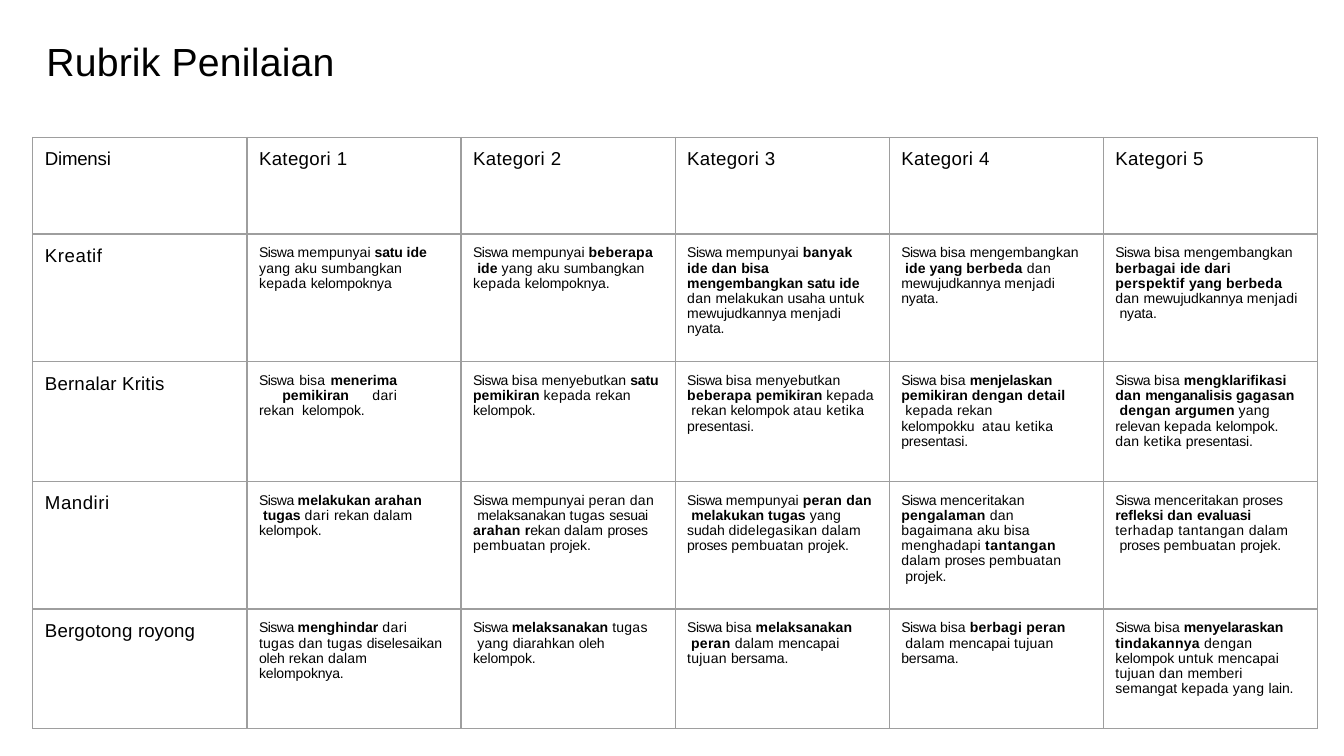
import dataclasses

import lxml.etree
import pptx
import pptx.dml.color
import pptx.enum.text
import pptx.oxml.ns
import pptx.util

Pt = pptx.util.Pt
ALIGN = pptx.enum.text.PP_ALIGN


@dataclasses.dataclass(frozen=True)
class Theme:
    font: str = "Arial"
    ink: str = "000000"
    rule: str = "9E9E9E"
    title: float = 21
    label: float = 10
    body: float = 7.5
    line: float = 0.75


@dataclasses.dataclass(frozen=True)
class Note:
    """Cell text; asterisks enclose bold words, right is the right margin."""
    text: str
    right: float = 0
    just: bool = False


THEME = Theme()

# Letter spacing by word, in points; words not listed have none
GROUPS = {
    0.3: "Kreatif Mandiri",
    0.2: "Kategori dari atau tantangan terhadap",
    0.1: "Rubrik Penilaian Bernalar Kritis Bergotong yang kepada beberapa "
         "banyak dan untuk menjadi berbeda berbagai perspektif dengan detail "
         "ketika gagasan peran tugas dalam pembuatan arahan didelegasikan "
         "pengalaman bagaimana menghadapi tindakannya tujuan berbagi",
    -0.1: "Dimensi 2 satu kelompoknya kelompok kelompokku usaha mewujudkannya "
          "nyata presentasi menjelaskan menganalisis relevan melaksanakan "
          "projek sudah reﬂeksi evaluasi diselesaikan oleh bersama "
          "menyelaraskan lain r ekan",
    -0.2: "4 proses sesuai",
    -0.3: "3 5 Siswa",
    -2.3: "1",
}
TRACK = {word: gap for gap, words in GROUPS.items() for word in words.split()}
BOLD_TRACK = TRACK | {"yang": 0, "tugas": 0, "melaksanakan": 0,
                      "dari": 0.1, "bisa": -0.1}

HEADS = ["Dimensi"] + [f"Kategori {n}" for n in range(1, 6)]
ROWS = {
    "Kreatif": [
        Note("Siswa mempunyai *satu ide  *yang aku sumbangkan  kepada kelompoknya", 16),
        Note("Siswa mempunyai *beberapa  ide *yang aku sumbangkan  kepada kelompoknya.", 10.2),
        Note("Siswa mempunyai *banyak  ide dan bisa  mengembangkan satu ide  *dan "
             "melakukan usaha untuk  mewujudkannya menjadi  nyata.", 10.3),
        Note("Siswa bisa mengembangkan  *ide yang berbeda *dan  mewujudkannya "
             "menjadi  nyata.", 11.5),
        Note("Siswa bisa mengembangkan  *berbagai ide dari  perspektif yang berbeda  *"
             "dan mewujudkannya menjadi  nyata.", 8.8),
    ],
    "Bernalar Kritis": [
        Note("Siswa bisa *menerima  pemikiran *dari rekan  kelompok.", 34.2, True),
        Note("Siswa bisa menyebutkan *satu  pemikiran *kepada rekan  kelompok.", 6.6),
        Note("Siswa bisa menyebutkan  *beberapa pemikiran *kepada  rekan kelompok "
             "atau ketika  presentasi.", 6.6),
        Note("Siswa bisa *menjelaskan  pemikiran dengan detail  *kepada rekan "
             "kelompokku  atau ketika presentasi.", 19),
        Note("Siswa bisa *mengklariﬁkasi  dan menganalisis gagasan  dengan argumen *"
             "yang  relevan kepada kelompok.  dan ketika presentasi.", 11),
    ],
    "Mandiri": [
        Note("Siswa *melakukan arahan  tugas *dari rekan dalam  kelompok.", 19.3),
        Note("Siswa mempunyai peran dan  melaksanakan tugas sesuai  *arahan r*ekan "
             "dalam proses  pembuatan projek.", 9.8),
        Note("Siswa mempunyai *peran dan  melakukan tugas *yang  sudah didelegasikan "
             "dalam  proses pembuatan projek.", 7.7),
        Note("Siswa menceritakan  *pengalaman *dan  bagaimana aku bisa  menghadapi "
             "*tantangan  *dalam proses pembuatan  projek.", 20.6),
        Note("Siswa menceritakan proses  *reﬂeksi dan evaluasi  *terhadap tantangan "
             "dalam  proses pembuatan projek.", 14.2),
    ],
    "Bergotong royong": [
        Note("Siswa *menghindar *dari  tugas dan tugas diselesaikan  oleh rekan "
             "dalam  kelompoknya.", 8),
        Note("Siswa *melaksanakan *tugas  yang diarahkan oleh  kelompok.", 13),
        Note("Siswa bisa *melaksanakan  peran *dalam mencapai  tujuan bersama.", 17.8),
        Note("Siswa bisa *berbagi peran  *dalam mencapai tujuan  bersama.", 18.5),
        Note("Siswa bisa *menyelaraskan  tindakannya *dengan  kelompok untuk "
             "mencapai  tujuan dan memberi  semangat kepada yang lain.", 11),
    ],
}
HEIGHTS = [51.8, 68.4, 64.1, 68.4, 64.1]
WIDTH = 114.7


def split_runs(text: str) -> list[tuple[str, bool, float]]:
    """Cut marked text into (text, bold, spacing), joining equal neighbours."""
    runs: list[tuple[str, bool, float]] = []
    for i, part in enumerate(text.split("*")):
        bold = i % 2 == 1
        track = BOLD_TRACK if bold else TRACK
        words = part.split(" ")
        for j, word in enumerate(words):
            piece = word + (" " if j < len(words) - 1 else "")
            if not piece:
                continue
            gap = track.get(word.rstrip("."), 0) if word else runs[-1][2]
            if runs and runs[-1][1:] == (bold, gap):
                piece = runs.pop()[0] + piece
            runs.append((piece, bold, gap))
    return runs


def add_runs(para, text: str, size: float) -> None:
    for piece, bold, gap in split_runs(text):
        run = para.add_run()
        run.text = piece
        font = run.font
        font.name, font.size, font.bold = THEME.font, Pt(size), bold
        font.color.rgb = pptx.dml.color.RGBColor.from_string(THEME.ink)
        run._r.get_or_add_rPr().set("spc", str(round(gap * 100)))


def add_rules(cell) -> None:
    """Draw the four borders, which must come before the fill."""
    props = cell._tc.get_or_add_tcPr()
    tag = pptx.oxml.ns.qn
    for i, side in enumerate("LRTB"):
        line = lxml.etree.Element(tag(f"a:ln{side}"), w=str(Pt(THEME.line)))
        fill = lxml.etree.SubElement(line, tag("a:solidFill"))
        lxml.etree.SubElement(fill, tag("a:srgbClr"), val=THEME.rule)
        props.insert(i, line)


def fill_cell(cell, note: Note, size: float) -> None:
    cell.fill.background()
    add_rules(cell)
    cell.margin_left, cell.margin_top = Pt(6.5), Pt(6.3)
    cell.margin_right, cell.margin_bottom = Pt(note.right), Pt(0)
    para = cell.text_frame.paragraphs[0]
    para.alignment = ALIGN.JUSTIFY if note.just else ALIGN.LEFT
    if size == THEME.body:
        para.line_spacing = 0.97
    add_runs(para, note.text, size)


def add_title(slide, text: str) -> None:
    title = slide.shapes.title
    title.left, title.top = Pt(23.8), Pt(16.6)
    title.width, title.height = Pt(157.7), Pt(27.4)
    frame = title.text_frame
    frame.margin_left, frame.margin_top = Pt(1), Pt(3.3)
    frame.margin_right = frame.margin_bottom = Pt(0)
    frame.vertical_anchor = pptx.enum.text.MSO_ANCHOR.TOP
    frame.auto_size = pptx.enum.text.MSO_AUTO_SIZE.SHAPE_TO_FIT_TEXT
    para = frame.paragraphs[0]
    para.alignment = ALIGN.LEFT
    add_runs(para, text, THEME.title)


def add_rubric(slide) -> None:
    count = len(HEADS)
    table = slide.shapes.add_table(
        len(HEIGHTS), count, Pt(17.6), Pt(73.6),
        Pt(WIDTH * count), Pt(sum(HEIGHTS))).table
    table.first_row = table.horz_banding = False
    for col in table.columns:
        col.width = Pt(WIDTH)
    for row, height in zip(table.rows, HEIGHTS):
        row.height = Pt(height)
    grid = [[Note(head) for head in HEADS]]
    grid += [[Note(name), *notes] for name, notes in ROWS.items()]
    for r, notes in enumerate(grid):
        for c, note in enumerate(notes):
            size = THEME.body if r and c else THEME.label
            fill_cell(table.cell(r, c), note, size)


def main() -> None:
    deck = pptx.Presentation()
    deck.slide_width, deck.slide_height = Pt(720), Pt(405)
    slide = deck.slides.add_slide(deck.slide_layouts[5])  # title only
    add_title(slide, "Rubrik Penilaian")
    add_rubric(slide)
    deck.save("out.pptx")


if __name__ == "__main__":
    main()
